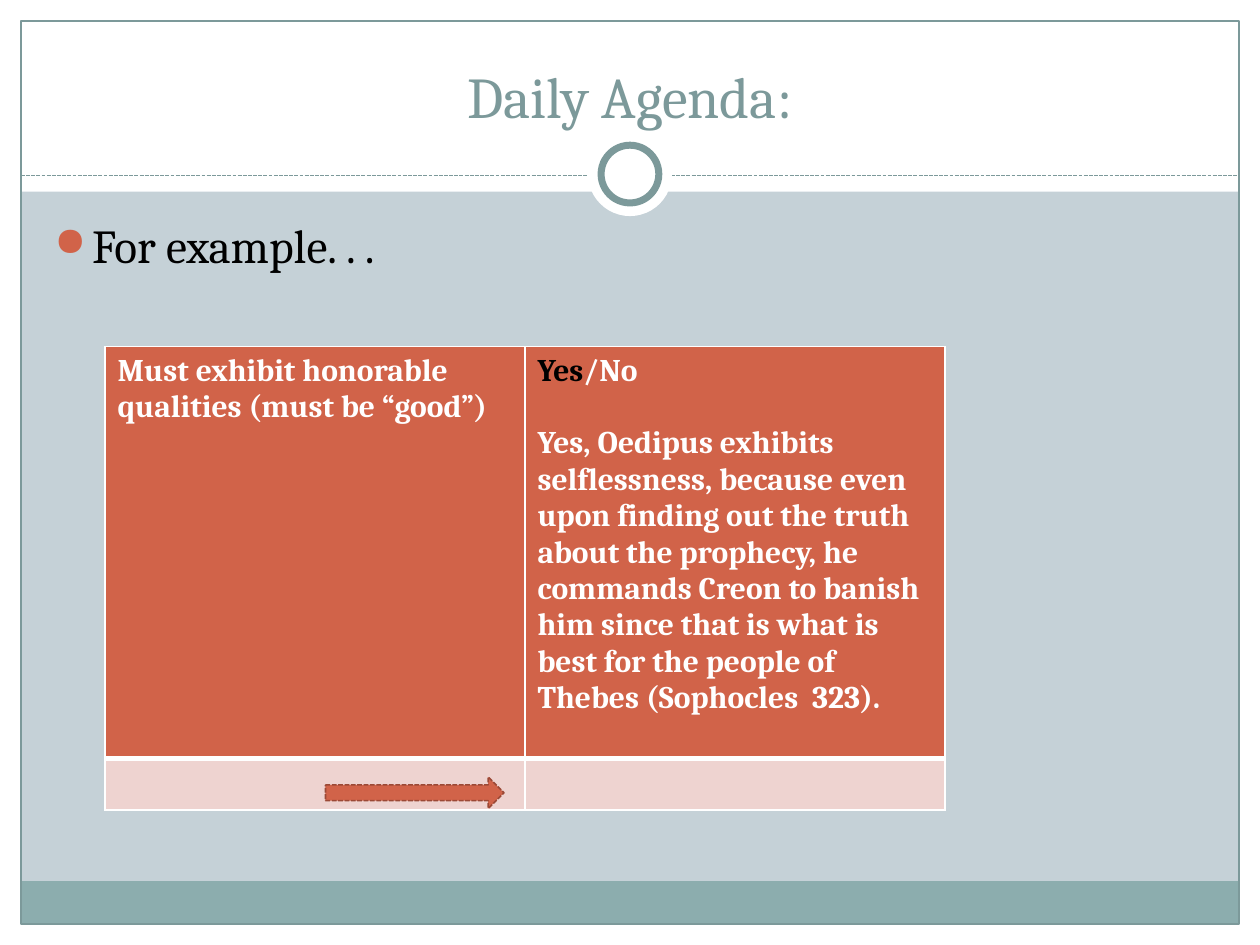
"""Build the Daily Agenda slide with its example table."""
from lxml import etree
from pptx import Presentation
from pptx.dml.color import RGBColor
from pptx.enum.dml import MSO_LINE
from pptx.enum.shapes import MSO_CONNECTOR, MSO_SHAPE
from pptx.enum.text import MSO_ANCHOR, PP_ALIGN
from pptx.oxml.ns import qn
from pptx.util import Pt

RECT, OVAL, ARROW = MSO_SHAPE.RECTANGLE, MSO_SHAPE.OVAL, MSO_SHAPE.RIGHT_ARROW
LINE, DASH = MSO_CONNECTOR.STRAIGHT, MSO_LINE.SQUARE_DOT
CENTER, LEFT = PP_ALIGN.CENTER, PP_ALIGN.LEFT
TOP, BOTTOM = MSO_ANCHOR.TOP, MSO_ANCHOR.BOTTOM
FONT = "Cambria"
HUE = {"back": "C5D1D7", "white": "FFFFFF", "band": "8CADAE", "teal": "7C999A",
       "black": "000000", "rust": "D16349", "pink": "EED3D0", "edge": "9B4936"}

TITLE = "Daily Agenda:"
LEAD = "For example. . ."
RULE = [[("Must exhibit honorable qualities (must be “good”)", "white")]]
PROOF = [
    [("Yes", "black"), ("/No", "white")],
    [("Yes, Oedipus exhibits selflessness, because even upon finding out the "
      "truth about the prophecy, he commands Creon to banish him since that is "
      "what is best for the people of Thebes (Sophocles  323).", "white")],
]
ROWS = [("rust", 235.6, [RULE, PROOF]), ("pink", 29.2, [[], []])]

WIDE, HIGH, EDGE = 720, 540, 12
HEAD = 109.5
FRAME = (EDGE, EDGE, WIDE - 2 * EDGE, HIGH - 2 * EDGE)
PANELS = [
    (0, HIGH - EDGE, WIDE, EDGE, "white"),
    (0, 0, WIDE, HEAD, "white"),
    (0, 0, EDGE, HIGH, "white"),
    (WIDE - EDGE, 0, EDGE, HIGH, "white"),
    (EDGE, 503.5, WIDE - 2 * EDGE, 24.5, "band"),
]
RING_Y = 99.5
RINGS = [(48, None, 0), (33, "teal", 4)]


def color(name):
    return RGBColor.from_string(HUE[name])


def draw(slide, kind, box, fill=None, line=None, width=0.75, dash=None):
    shape = slide.shapes.add_shape(kind, *map(Pt, box))
    shape.shadow.inherit = False
    if fill:
        shape.fill.solid()
        shape.fill.fore_color.rgb = color(fill)
    else:
        shape.fill.background()
    if line:
        shape.line.color.rgb = color(line)
        shape.line.width = Pt(width)
        shape.line.dash_style = dash
    else:
        shape.line.fill.background()
    return shape


def write(frame, paras, size=18, bold=False, align=LEFT, anchor=TOP, before=0, gap=0):
    frame.word_wrap = True
    frame.vertical_anchor = anchor
    for i, runs in enumerate(paras):
        para = frame.add_paragraph() if i else frame.paragraphs[0]
        para.alignment = align
        para.space_before = Pt(gap if i else before)
        for text, tint in runs:
            run = para.add_run()
            run.text = text
            run.font.name = FONT
            run.font.size = Pt(size)
            run.font.bold = bold
            run.font.color.rgb = color(tint)
    return frame


def bullet(para, tint, indent):
    props = para._p.get_or_add_pPr()
    props.set("marL", str(Pt(indent)))
    props.set("indent", str(-Pt(indent)))
    paint = etree.SubElement(props, qn("a:buClr"))
    etree.SubElement(paint, qn("a:srgbClr"), val=HUE[tint])
    etree.SubElement(props, qn("a:buSzPct"), val="85000")
    etree.SubElement(props, qn("a:buChar"), char="●")


def border(cell, widths):
    props = cell._tc.get_or_add_tcPr()
    for i, (side, width) in enumerate(widths.items()):
        line = etree.Element(qn("a:ln" + side), w=str(Pt(width)))
        fill = etree.SubElement(line, qn("a:solidFill"))
        etree.SubElement(fill, qn("a:srgbClr"), val=HUE["white"])
        props.insert(i, line)


def grid(slide, left, top, width):
    high = sum(row[1] for row in ROWS)
    table = slide.shapes.add_table(2, 2, Pt(left), Pt(top), Pt(width), Pt(high)).table
    for r, (fill, tall, cells) in enumerate(ROWS):
        table.rows[r].height = Pt(tall)
        for c, paras in enumerate(cells):
            cell = table.cell(r, c)
            cell.fill.solid()
            cell.fill.fore_color.rgb = color(fill)
            border(cell, {"L": 1, "R": 1, "T": 3 if r else 1, "B": 1 if r else 3})
            write(cell.text_frame, paras, bold=True, gap=20.8)


def main():
    deck = Presentation()
    deck.slide_width, deck.slide_height = Pt(WIDE), Pt(HIGH)
    slide = deck.slides.add_slide(deck.slide_layouts[6])
    slide.background.fill.solid()
    slide.background.fill.fore_color.rgb = color("back")

    for *box, fill in PANELS:
        draw(slide, RECT, box, fill)
    draw(slide, RECT, FRAME, line="teal")
    rule = slide.shapes.add_connector(LINE, Pt(EDGE), Pt(100.5), Pt(WIDE - EDGE), Pt(100.5))
    rule.line.color.rgb = color("teal")
    rule.line.width = Pt(0.75)
    rule.line.dash_style = DASH
    etree.SubElement(rule._element.spPr, qn("a:effectLst"))
    for size, line, width in RINGS:
        box = ((WIDE - size) / 2, RING_Y - size / 2, size, size)
        draw(slide, OVAL, box, "white", line, width)

    title = slide.shapes.add_textbox(Pt(24), Pt(18), Pt(672), Pt(60))
    write(title.text_frame, [[(TITLE, "teal")]], size=33, align=CENTER, anchor=BOTTOM)
    body = slide.shapes.add_textbox(Pt(24), Pt(120), Pt(670), Pt(360))
    lead = write(body.text_frame, [[(LEAD, "black")]], size=27, before=5.4)
    bullet(lead.paragraphs[0], "rust", 21.6)

    grid(slide, 60, 198, 480)
    draw(slide, ARROW, (186, 444, 102, 18), "rust", "edge", 0.9, DASH)
    deck.save("out.pptx")


if __name__ == "__main__":
    main()
